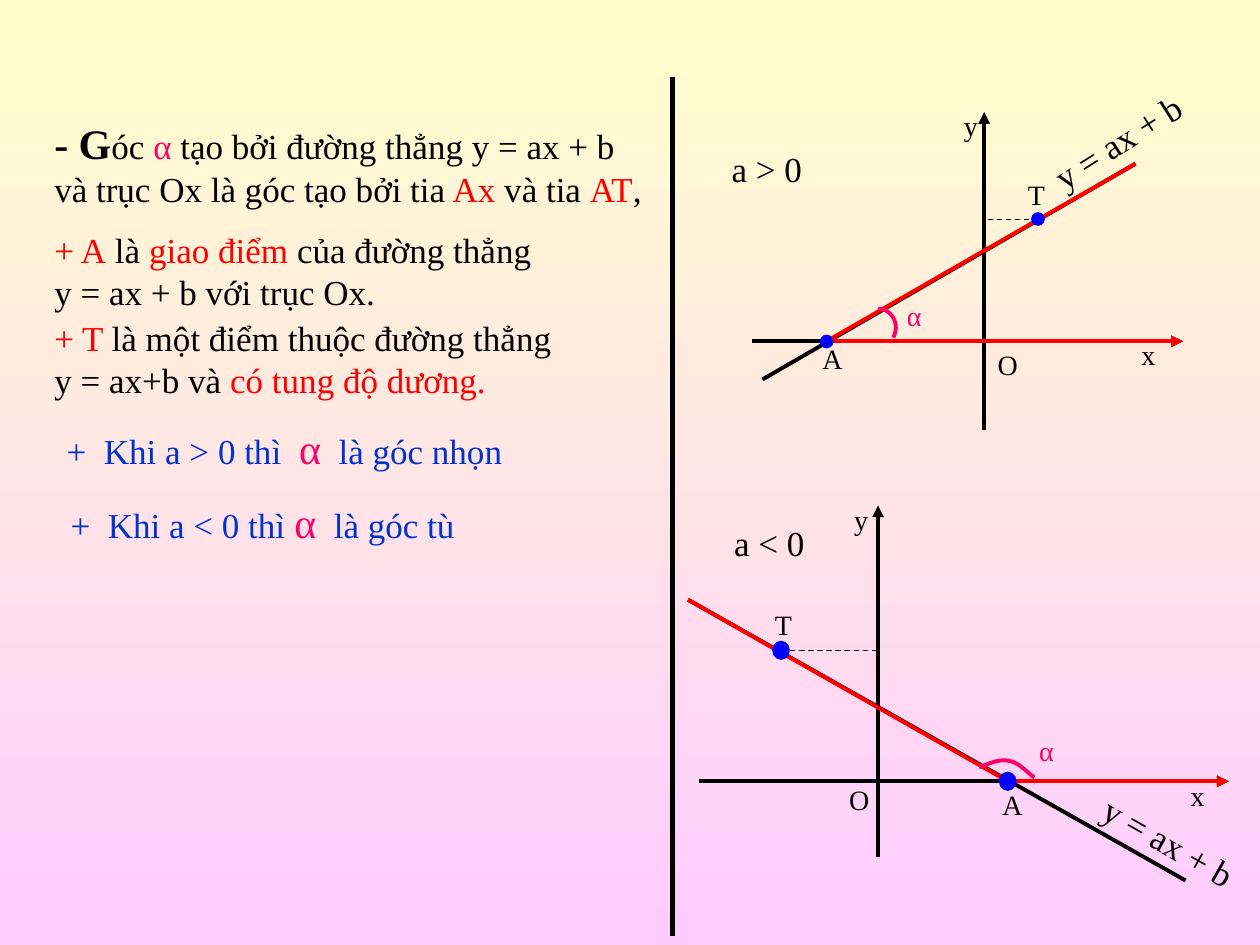
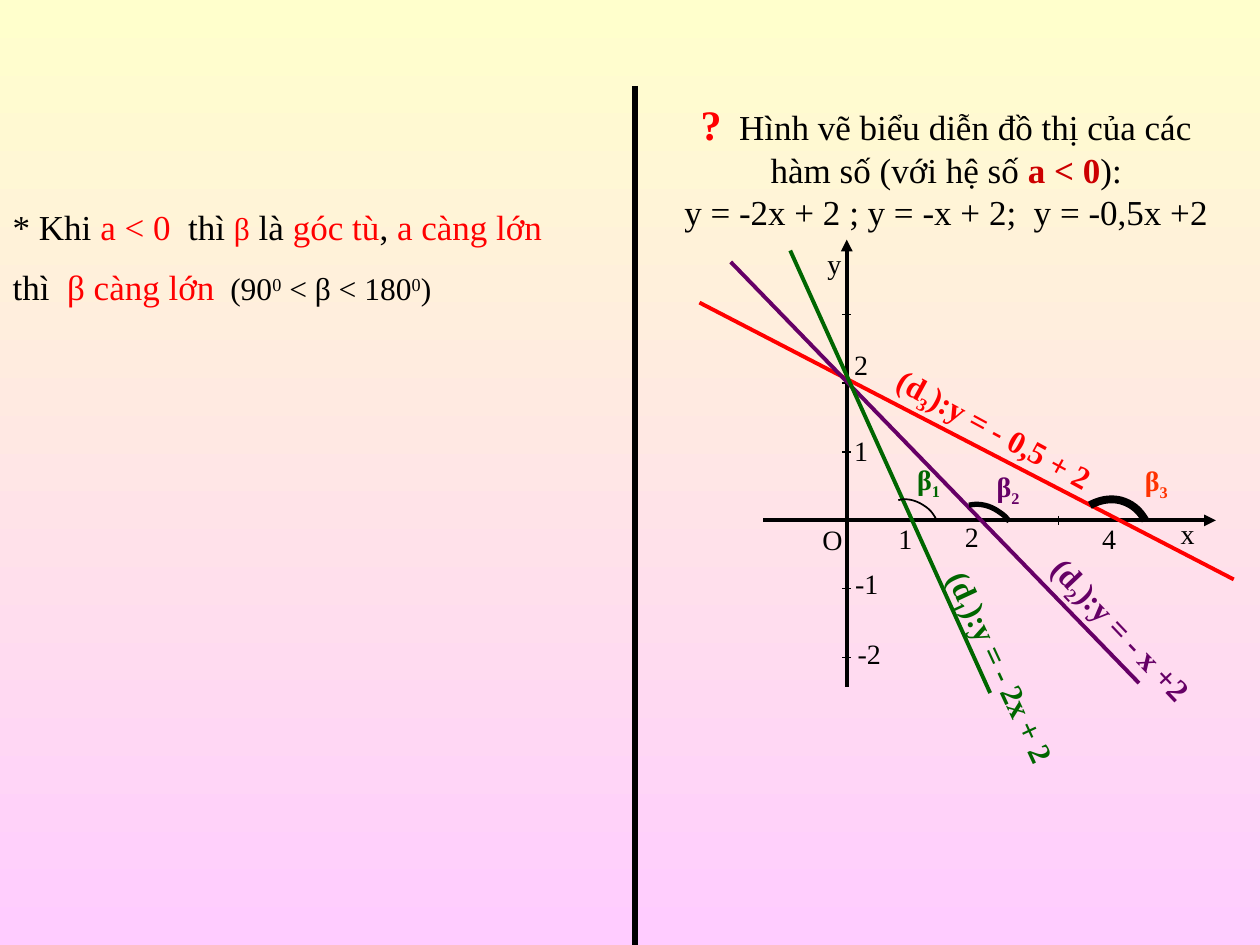
from lxml import etree
from pptx import Presentation
from pptx.dml.color import RGBColor
from pptx.enum.dml import MSO_LINE
from pptx.enum.shapes import MSO_CONNECTOR, MSO_SHAPE
from pptx.enum.text import MSO_ANCHOR, MSO_AUTO_SIZE, PP_ALIGN
from pptx.oxml.ns import qn
from pptx.util import Cm, Pt

LEFT, CENTER, JUSTIFY = PP_ALIGN.LEFT, PP_ALIGN.CENTER, PP_ALIGN.JUSTIFY
STRAIGHT, OVAL, DASH = MSO_CONNECTOR.STRAIGHT, MSO_SHAPE.OVAL, MSO_LINE.DASH
TOP, FIXED = MSO_ANCHOR.TOP, MSO_AUTO_SIZE.NONE

FONT = "Times New Roman"
COLORS = {
    "ink": "000000", "red": "FF0000", "pink": "FF0066", "blue": "0033CC",
    "dot": "0000FF", "green": "006600", "plum": "660066", "rust": "FF3300",
    "wine": "CC0000", "cream": "FFFFCC", "lilac": "FFCCFF",
}
SMALL, MEDIUM, LARGE, HUGE = 16, 18, 20, 24
THIN, THICK, BAR = 0.75, 2.25, 3

RED, PINK, BLUE = {"color": "red"}, {"color": "pink"}, {"color": "blue"}
ALPHA = ("α", {"color": "pink", "size": HUGE})
NOTED, SUB = {"size": MEDIUM}, {"base": -25}
POWER = ("0", {"size": MEDIUM, "base": 30})

RULES = [
    {"gap": 0, "dent": 0, "parts": [
        ("- G", {"size": HUGE, "bold": True}), "óc ", ("α", PINK),
        " tạo bởi đường thẳng y = ax + b và trục Ox là góc tạo bởi tia",
        (" Ax", RED), " và tia ", ("AT", RED), ","]},
    {"gap": 10.4, "dent": 0, "parts": [
        ("+ A", RED), " là ", ("giao điểm", RED), " của đường thẳng", "\n",
        "y = ax + b với trục Ox."]},
    {"gap": 2.7, "dent": 0, "parts": [
        ("+ T ", RED), "là một điểm thuộc đường thẳng", "\n",
        "y = ax+b và ", ("có tung độ dương.", RED)]},
    {"gap": 12.4, "dent": 0.1, "parts": [
        ("+  Khi a > 0 thì  ", BLUE), ALPHA, ("  là góc nhọn", BLUE)]},
    {"gap": 13.3, "dent": 0.13, "parts": [
        ("+  Khi a < 0 thì ", BLUE), ALPHA, ("  là góc tù", BLUE)]},
]

GRAPHS = [
    {
        "case": ("a > 0", 5.71, 1.12),
        "O": (7.81, 2.71), "A": (6.56, 2.71), "T": (8.24, 1.74),
        "across": (5.97, 9.39), "down": (0.89, 3.41),
        "high": (9.01, 1.3), "low": (6.05, 3.01), "dot": (0.1, 0.1),
        "arc": [(6.97, 2.45), (7.05, 2.45), (7.11, 2.52), (7.11, 2.6),
                (7.11, 2.63), (7.1, 2.66), (7.09, 2.68)],
        "names": {"A": (6.43, 2.66), "T": (8.06, 1.36), "O": (7.82, 2.71),
                  "x": (8.96, 2.63), "y": (7.55, 0.81), "α": (7.1, 2.32)},
        "slope": (8.19, 0.85, 327.7),
    },
    {
        "case": ("a < 0", 5.73, 4.09),
        "O": (6.97, 6.2), "A": (8, 6.2), "T": (6.2, 5.16),
        "across": (5.55, 9.75), "down": (4.01, 6.8),
        "high": (5.46, 4.76), "low": (9.41, 6.99), "dot": (0.13, 0.14),
        "arc": [(7.77, 6.09), (7.85, 6.06), (7.94, 6.02), (8.01, 6.04),
                (8.09, 6.05), (8.17, 6.15), (8.21, 6.17)],
        "names": {"A": (7.86, 6.2), "T": (6.05, 4.77), "O": (6.64, 6.16),
                  "x": (9.35, 6.13), "y": (6.68, 3.94), "α": (8.15, 5.77)},
        "slope": (8.6, 6.51, 29.4),
    },
]

TITLE = [
    {"parts": [("?", {"size": HUGE, "color": "red", "bold": True}),
               "  Hình vẽ biểu diễn đồ thị của các hàm số (với hệ số ",
               ("a < 0", {"color": "wine", "bold": True}), "):"]},
    {"parts": ["y = -2x + 2 ; y = -x + 2;  y = -0,5x +2"]},
]
NOTES = [
    {"parts": ["* Khi ", ("a < 0 ", RED), " thì ",
               ("β", {"color": "red", "size": MEDIUM}), " là ",
               ("góc tù", RED), ", ", ("a càng lớn ", RED)]},
    {"gap": 10.5, "parts": [
        "thì  ", ("β càng lớn", RED), ("  (90", NOTED), POWER,
        (" < β < 180", NOTED), POWER, (")", NOTED)]},
]

ORIGIN, STEP, TICK = (6.72, 4.13), 0.545, 0.035
ACROSS, DOWN = (6.06, 9.65), (1.9, 5.45)
TICKS = [(ORIGIN[0], ORIGIN[1] - k * STEP) for k in (-2, -1, 1, 2, 3)]
THIRD = (8.4, ORIGIN[1])
PLOTS = [
    {"sub": "3", "rule": "):y = - 0,5 + 2", "color": "red", "mark": "rust",
     "ends": (5.55, 2.4, 9.79, 4.6), "beta": (8.99, 3.63),
     "name": {"x": 6.94, "y": 3.21, "width": 1.92, "turn": 28.5, "wrap": False},
     "pen": 4.5,
     "arc": [(8.65, 4.01), (8.74, 3.96), (8.84, 3.95), (8.92, 3.98),
             (9, 4.01), (9.05, 4.06), (9.09, 4.13)]},
    {"sub": "2", "rule": "):y = - x +2", "color": "plum", "mark": "plum",
     "ends": (5.8, 2.08, 9.04, 5.42), "beta": (7.81, 3.68),
     "name": {"x": 8.07, "y": 4.8, "width": 1.67, "turn": 46.5, "wrap": False},
     "pen": 3,
     "arc": [(7.69, 4.01), (7.77, 3.99), (7.86, 4.01), (7.94, 4.07),
             (7.97, 4.09), (7.99, 4.11), (8.01, 4.14)]},
    {"sub": "1", "rule": "):y = - 2x + 2", "color": "green", "mark": "green",
     "ends": (6.27, 1.99, 7.86, 5.5), "beta": (7.18, 3.62),
     "name": {"x": 6.97, "y": 5.18, "width": 2.04, "turn": 65.1},
     "pen": 1,
     "arc": [(7.13, 3.97), (7.19, 3.95), (7.27, 3.97), (7.33, 4.01),
             (7.38, 4.04), (7.41, 4.08), (7.43, 4.12)]},
]
MARKS = [
    ("y", 6.47, 1.91), ("x", 9.27, 4.05), ("O", 6.43, 4.1),
    ("1", 7.03, 4.09), ("2", 7.56, 4.07), ("4", 8.65, 4.09),
    ("2", 6.68, 2.71), ("1", 6.68, 3.39), ("-1", 6.69, 4.45), ("-2", 6.71, 5),
]


def inch(value):
    return Cm(round(value * 2.54, 2))


def tint(name):
    return RGBColor.from_string(COLORS[name])


def write(frame, paras, size=SMALL, color="ink", bold=False, align=LEFT):
    for i, item in enumerate(paras):
        para = frame.add_paragraph() if i else frame.paragraphs[0]
        para.alignment = align
        para.space_before = Pt(item.get("gap", 0))
        props = para._p.get_or_add_pPr()
        props.set("marL", str(inch(item.get("dent", 0))))
        props.set("indent", "0")
        etree.SubElement(props, qn("a:buNone"))
        for part in item["parts"]:
            text, style = (part, {}) if isinstance(part, str) else part
            if text == "\n":
                para.add_line_break()
                continue
            run = para.add_run()
            run.text = text
            run.font.name = FONT
            run.font.size = Pt(style.get("size", size))
            run.font.bold = style.get("bold", bold)
            run.font.color.rgb = tint(style.get("color", color))
            if "base" in style:
                run._r.get_or_add_rPr().set("baseline", str(style["base"] * 1000))


def place(holder, box, paras, align=LEFT):
    holder.left, holder.top, holder.width, holder.height = map(inch, box)
    frame = holder.text_frame
    frame.auto_size, frame.vertical_anchor = FIXED, TOP
    write(frame, paras, size=LARGE, align=align)


def label(slide, parts, x, y, width=0.45, turn=0, wrap=True, size=SMALL, **style):
    height = 0.1 + size / 60
    box = slide.shapes.add_textbox(*map(inch, (x, y, width, height)))
    box.rotation = turn
    box.text_frame.word_wrap = wrap
    write(box.text_frame, [{"parts": parts}], size=size, **style)


def line(slide, x1, y1, x2, y2, color="ink", width=THICK, arrow=False, dash=False):
    link = slide.shapes.add_connector(STRAIGHT, *map(inch, (x1, y1, x2, y2)))
    link.line.color.rgb = tint(color)
    link.line.width = Pt(width)
    if dash:
        link.line.dash_style = DASH
    if arrow:
        etree.SubElement(link.line._get_or_add_ln(), qn("a:tailEnd"), type="triangle")
    etree.SubElement(link._element.spPr, qn("a:effectLst"))


def axes(slide, origin, across, down):
    x, y = origin
    (left, right), (top, bottom) = across, down
    line(slide, x, bottom, x, top, arrow=True)
    line(slide, left, y, right, y, arrow=True)


def bezier(points, t):
    shares = ((1 - t) ** 3, 3 * t * (1 - t) ** 2, 3 * t * t * (1 - t), t ** 3)
    return tuple(sum(s * p[axis] for s, p in zip(shares, points)) for axis in (0, 1))


def arc(slide, points, color="ink", width=THICK, steps=12):
    track = [bezier(points[k:k + 4], n / steps)
             for k in range(0, len(points) - 1, 3) for n in range(steps + 1)]
    start, *rest = [(int(Cm(2.54 * x)), int(Cm(2.54 * y))) for x, y in track]
    form = slide.shapes.build_freeform(*start, scale=1.0)
    form.add_line_segments(rest, close=False)
    shape = form.convert_to_shape()
    shape.shadow.inherit = False
    shape.fill.background()
    shape.line.color.rgb = tint(color)
    shape.line.width = Pt(width)


def dot(slide, center, size):
    (x, y), (width, height) = center, size
    box = (x - width / 2, y - height / 2, width, height)
    shape = slide.shapes.add_shape(OVAL, *map(inch, box))
    shape.shadow.inherit = False
    shape.fill.solid()
    shape.fill.fore_color.rgb = shape.line.color.rgb = tint("dot")
    shape.line.width = Pt(THIN)


def backdrop(master):
    fill = master.background.fill
    fill.gradient()
    fill.gradient_angle = 270
    for stop, name in zip(fill.gradient_stops, ("cream", "lilac")):
        stop.color.rgb = tint(name)


def draw_graph(slide, graph):
    origin, cross, point = graph["O"], graph["A"], graph["T"]
    axes(slide, origin, graph["across"], graph["down"])
    line(slide, *graph["high"], *graph["low"])
    line(slide, *point, origin[0], point[1], width=THIN, dash=True)
    line(slide, *cross, graph["across"][1], cross[1], color="red", arrow=True)
    line(slide, *graph["high"], *cross, color="red")
    arc(slide, graph["arc"], color="pink")
    for center in (cross, point):
        dot(slide, center, graph["dot"])
    for name, spot in graph["names"].items():
        label(slide, [name], *spot, color="pink" if name == "α" else "ink")
    case, x, y = graph["case"]
    label(slide, [case], x, y, width=0.93, size=LARGE)
    x, y, turn = graph["slope"]
    label(slide, ["y = ax + b"], x, y, width=1.53, turn=turn, size=LARGE)


def draw_plot(slide, plot):
    sub = (plot["sub"], SUB)
    line(slide, *plot["ends"], color=plot["color"])
    arc(slide, plot["arc"], width=plot["pen"])
    label(slide, ["(d", sub, plot["rule"]], **plot["name"],
          size=MEDIUM, color=plot["color"], bold=True)
    label(slide, ["β", sub], *plot["beta"], color=plot["mark"], bold=True)


def angle_slide(slide):
    title, body = slide.placeholders
    title._element.getparent().remove(title._element)
    place(body, (0.33, 0.88, 4.96, 3.6), RULES)
    line(slide, 5.34, 0.61, 5.34, 7.43, width=BAR)
    for graph in GRAPHS:
        draw_graph(slide, graph)


def slope_slide(slide):
    title, body = slide.placeholders
    place(title, (5.2, 0.73, 4.62, 1.17), TITLE, align=CENTER)
    place(body, (0, 1.58, 5.13, 0.93), NOTES, align=JUSTIFY)
    line(slide, 5.04, 0.68, 5.04, 7.5, width=BAR)
    axes(slide, ORIGIN, ACROSS, DOWN)
    for x, y in TICKS:
        line(slide, x - TICK, y, x + TICK, y, width=THIN)
    x, y = THIRD
    line(slide, x, y - TICK, x, y + TICK, width=THIN)
    for plot in PLOTS:
        draw_plot(slide, plot)
    for text, x, y in MARKS:
        label(slide, [text], x, y)


def main():
    deck = Presentation()
    deck.slide_width, deck.slide_height = Cm(25.4), Cm(19.05)
    backdrop(deck.slide_master)
    for build in (angle_slide, slope_slide):
        build(deck.slides.add_slide(deck.slide_layouts[1]))
    deck.save("out.pptx")


if __name__ == "__main__":
    main()
